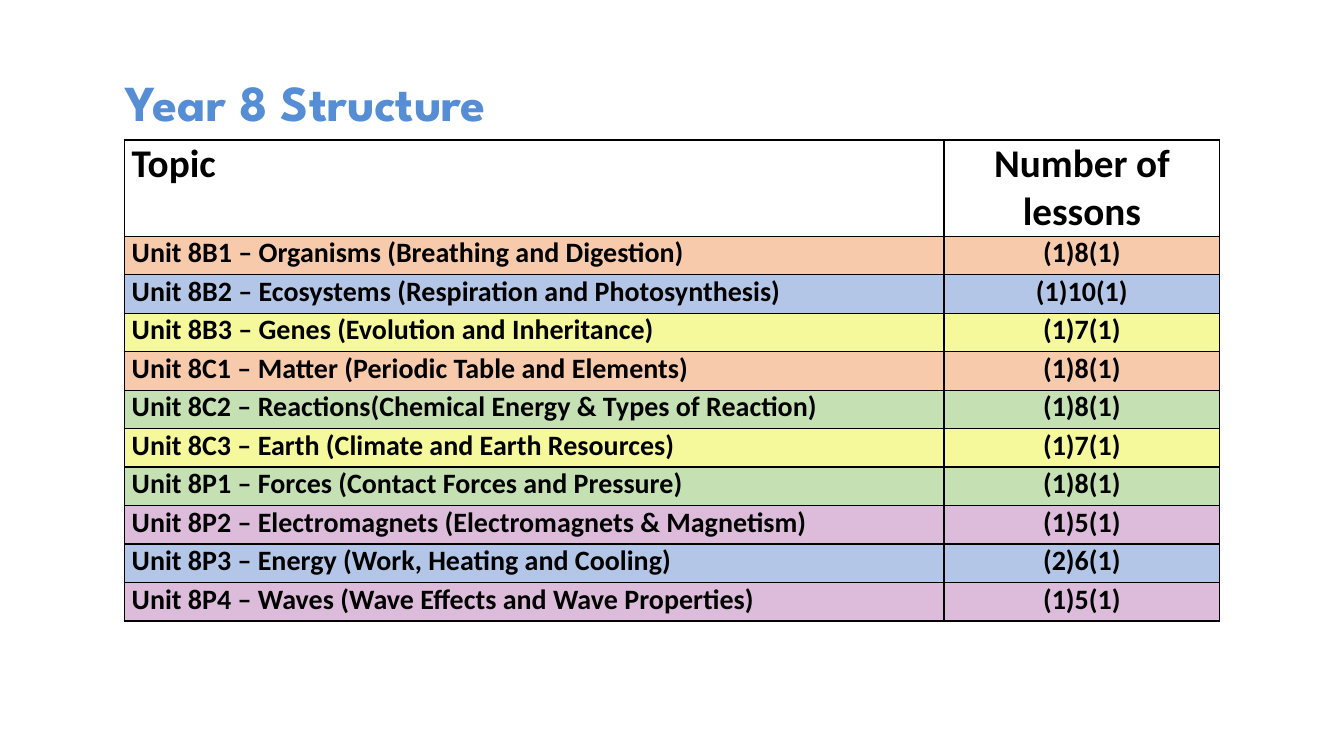
"""Build the Year 8 Structure slide: a title above a table of units and lesson counts."""
from lxml.etree import SubElement
from pptx import Presentation
from pptx.dml.color import RGBColor
from pptx.enum.text import MSO_ANCHOR, PP_ALIGN
from pptx.oxml.ns import qn
from pptx.util import Cm, Pt

BLACK = RGBColor(0x00, 0x00, 0x00)
TITLE_BLUE = RGBColor(0x55, 0x8E, 0xD5)
ORANGE = RGBColor(0xF7, 0xCA, 0xAC)
BLUE = RGBColor(0xB4, 0xC6, 0xE7)
YELLOW = RGBColor(0xF6, 0xF8, 0x9C)
GREEN = RGBColor(0xC5, 0xE0, 0xB3)
PURPLE = RGBColor(0xDC, 0xBC, 0xDA)

ROWS = [
    ("Topic", "Number of lessons", None),
    ("Unit 8B1 – Organisms (Breathing and Digestion)", "(1)8(1)", ORANGE),
    ("Unit 8B2 – Ecosystems (Respiration and Photosynthesis)", "(1)10(1)", BLUE),
    ("Unit 8B3 – Genes (Evolution and Inheritance)", "(1)7(1)", YELLOW),
    ("Unit 8C1 – Matter (Periodic Table and Elements)", "(1)8(1)", ORANGE),
    ("Unit 8C2 – Reactions(Chemical Energy & Types of Reaction)", "(1)8(1)", GREEN),
    ("Unit 8C3 – Earth (Climate and Earth Resources)", "(1)7(1)", YELLOW),
    ("Unit 8P1 – Forces (Contact Forces and Pressure)", "(1)8(1)", GREEN),
    ("Unit 8P2 – Electromagnets (Electromagnets & Magnetism)", "(1)5(1)", PURPLE),
    ("Unit 8P3 – Energy (Work, Heating and Cooling)", "(2)6(1)", BLUE),
    ("Unit 8P4 – Waves (Wave Effects and Wave Properties)", "(1)5(1)", PURPLE),
]
COLUMNS = [(Cm(20.66), PP_ALIGN.LEFT), (Cm(6.95), PP_ALIGN.CENTER)]
HEADER_HEIGHT, ROW_HEIGHT = Cm(2.42), Cm(0.97)


def write(tf, text, size, font="Calibri", color=BLACK, align=PP_ALIGN.LEFT):
    p = tf.paragraphs[0]
    p.alignment = align
    r = p.add_run()
    r.text = text
    r.font.name = font
    r.font.size = Pt(size)
    r.font.bold = True
    r.font.color.rgb = color


def add_borders(cell):
    tcPr = cell._tc.get_or_add_tcPr()
    for side in ("a:lnL", "a:lnR", "a:lnT", "a:lnB"):
        ln = SubElement(tcPr, qn(side), w=str(Pt(1)))
        fill = SubElement(ln, qn("a:solidFill"))
        SubElement(fill, qn("a:srgbClr"), val=str(BLACK))


prs = Presentation()
prs.slide_width, prs.slide_height = Cm(33.87), Cm(19.05)
s = prs.slides.add_slide(prs.slide_layouts[6])

title = s.shapes.add_textbox(Cm(2.92), Cm(0.74), Cm(21.74), Cm(3.63))
tf = title.text_frame
tf.word_wrap = True
tf.vertical_anchor = MSO_ANCHOR.MIDDLE
write(tf, "Year 8 Structure", 36, font="League Spartan", color=TITLE_BLUE)

width = sum(w for w, _ in COLUMNS)
height = HEADER_HEIGHT + ROW_HEIGHT * (len(ROWS) - 1)
table = s.shapes.add_table(len(ROWS), len(COLUMNS), Cm(3.13), Cm(3.53), width, height).table
table.horz_banding = False
for column, (w, _) in zip(table.columns, COLUMNS):
    column.width = w

for i, (topic, lessons, color) in enumerate(ROWS):
    table.rows[i].height = ROW_HEIGHT if i else HEADER_HEIGHT
    for j, text in enumerate((topic, lessons)):
        cell = table.cell(i, j)
        cell.margin_left = cell.margin_right = Cm(0.19)
        cell.margin_top = cell.margin_bottom = 0
        add_borders(cell)
        if color is None:
            cell.fill.background()
        else:
            cell.fill.solid()
            cell.fill.fore_color.rgb = color
        write(cell.text_frame, text, 20 if i else 28, align=COLUMNS[j][1])

prs.save("out.pptx")
